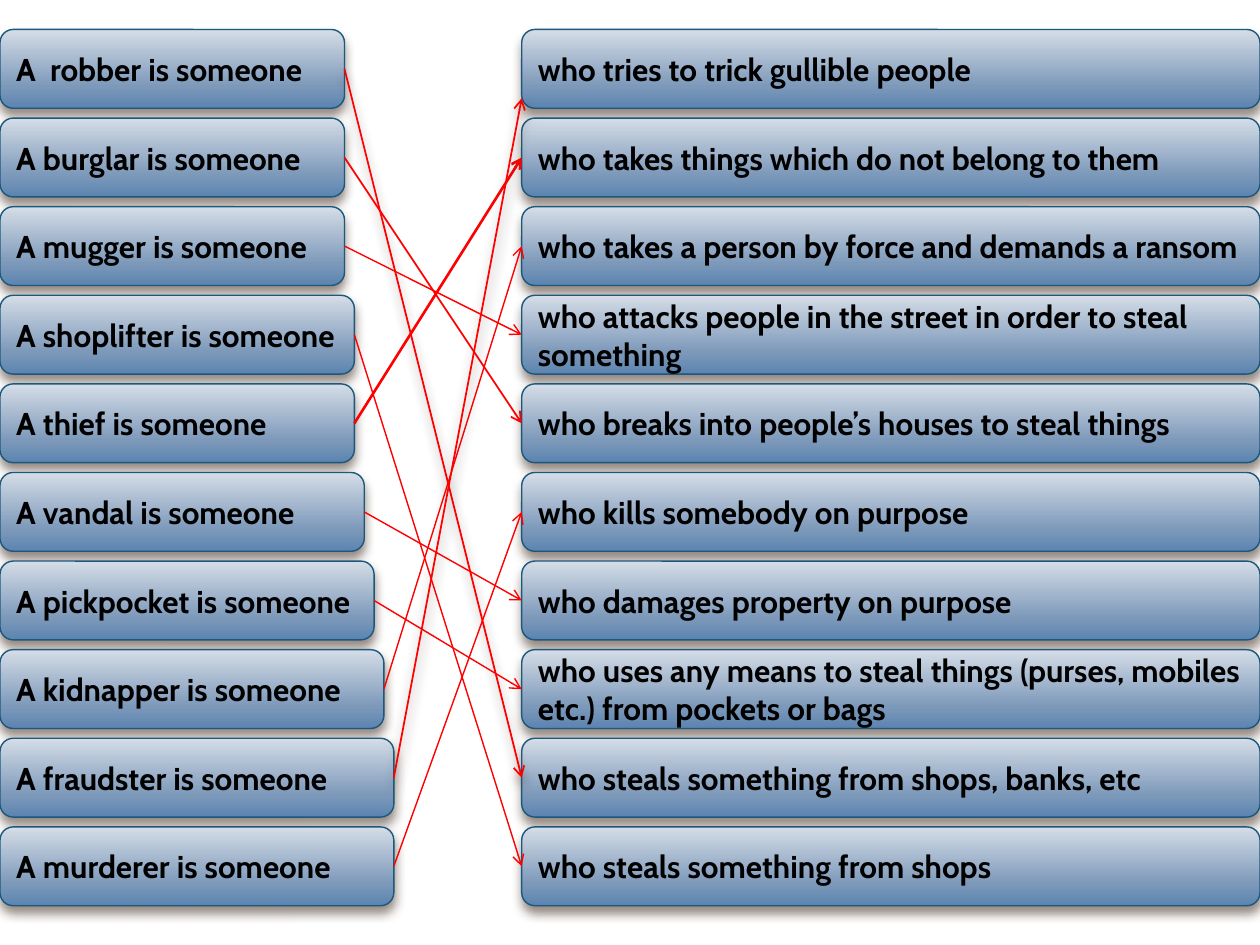
from lxml.etree import SubElement
from pptx import Presentation
from pptx.dml.color import RGBColor
from pptx.enum.shapes import MSO_CONNECTOR, MSO_SHAPE
from pptx.enum.text import MSO_ANCHOR, PP_ALIGN
from pptx.oxml.ns import qn
from pptx.util import Pt

HUES = {"pale": "D5DDE7", "mid": "7D99BA", "deep": "5B84B0", "edge": "1B587C",
        "shade": "4E3B30", "text": "000000", "link": "FF0000"}
STOPS = [(0, "pale"), (72, "mid"), (100, "deep")]

# Grid, in points
WIDE, HIGH = 720, 540
TOP, PITCH, TALL = 16.88, 50.63, 45
LEFT, STEP = 196.88, 5.63
RIGHT = 298.13
THIN = 0.79

# Each row: left text, steps of extra width, right text
ROWS = [
    ("A  robber is someone", 0, "who tries to trick gullible people"),
    ("A burglar is someone", 0, "who takes things which do not belong to them"),
    ("A mugger is someone", 0, "who takes a person by force and demands a ransom"),
    ("A shoplifter is someone", 1,
     "who attacks people in the street in order to steal something"),
    ("A thief is someone", 1, "who breaks into people’s houses to steal things"),
    ("A vandal is someone", 2, "who kills somebody on purpose"),
    ("A pickpocket is someone", 3, "who damages property on purpose"),
    ("A kidnapper is someone", 4,
     "who uses any means to steal things (purses, mobiles etc.) from pockets or bags"),
    ("A fraudster is someone", 5, "who steals something from shops, banks, etc"),
    ("A murderer is someone", 5, "who steals something from shops"),
]

# Each left row's match: right row, line width, shadow, drop of the arrow tip
LINKS = [(8, 1, True, 0), (4, 1, False, 0), (3, THIN, False, 0),
         (9, THIN, False, 0), (1, 1.5, False, 0), (6, THIN, False, 0),
         (7, THIN, False, 0), (2, THIN, False, 0), (0, 1, True, 16.75),
         (5, THIN, False, 0)]


class Deck:
    font, size = "Cabin", 18

    def __init__(self):
        self.prs = Presentation()
        self.prs.slide_width, self.prs.slide_height = Pt(WIDE), Pt(HIGH)
        self.slide = self.prs.slides.add_slide(self.prs.slide_layouts[6])

    def hue(self, name):
        return RGBColor.from_string(HUES[name])

    def tint(self, node, name):
        return SubElement(node, qn("a:srgbClr"), val=HUES[name])

    def shade(self, item, show=True):
        props = item._element.spPr
        for old in props.findall(qn("a:effectLst")):
            props.remove(old)
        fx = SubElement(props, qn("a:effectLst"))
        if show:
            drop = SubElement(fx, qn("a:outerShdw"), blurRad=str(Pt(6)),
                              dist=str(Pt(4)), dir="5400000", rotWithShape="0")
            SubElement(self.tint(drop, "shade"), qn("a:alpha"), val="60000")

    def blend(self, shape):
        shape.fill.gradient()
        shape.fill.gradient_angle = 270
        stops = shape._element.spPr.find(".//" + qn("a:gsLst"))
        for old in list(stops):
            stops.remove(old)
        for pos, name in STOPS:
            self.tint(SubElement(stops, qn("a:gs"), pos=str(pos * 1000)), name)

    def box(self, x, y, w, text):
        shape = self.slide.shapes.add_shape(
            MSO_SHAPE.ROUNDED_RECTANGLE, Pt(x), Pt(y), Pt(w), Pt(TALL))
        self.blend(shape)
        shape.line.color.rgb = self.hue("edge")
        shape.line.width = Pt(THIN)
        self.shade(shape)
        frame = shape.text_frame
        frame.word_wrap = True
        frame.vertical_anchor = MSO_ANCHOR.MIDDLE
        para = frame.paragraphs[0]
        para.alignment = PP_ALIGN.LEFT
        run = para.add_run()
        run.text = text
        run.font.name, run.font.size = self.font, Pt(self.size)
        run.font.bold = True
        run.font.color.rgb = self.hue("text")

    def link(self, x1, y1, x2, y2, width, shade):
        line = self.slide.shapes.add_connector(
            MSO_CONNECTOR.STRAIGHT, Pt(x1), Pt(y1), Pt(x2), Pt(y2))
        line.line.color.rgb = self.hue("link")
        line.line.width = Pt(width)
        SubElement(line.line._get_or_add_ln(), qn("a:tailEnd"), type="arrow")
        self.shade(line, shade)


def main():
    deck = Deck()

    # Two columns of boxes
    for i, (who, extra, what) in enumerate(ROWS):
        y = TOP + i * PITCH
        deck.box(0, y, LEFT + extra * STEP, who)
        deck.box(RIGHT, y, WIDE - RIGHT, what)

    # Arrows from each person to the matching crime
    mid = TOP + TALL / 2
    for i, (to, width, shade, drop) in enumerate(LINKS):
        deck.link(LEFT + ROWS[i][1] * STEP, mid + i * PITCH,
                  RIGHT, mid + to * PITCH + drop, width, shade)

    deck.prs.save("out.pptx")


if __name__ == "__main__":
    main()
